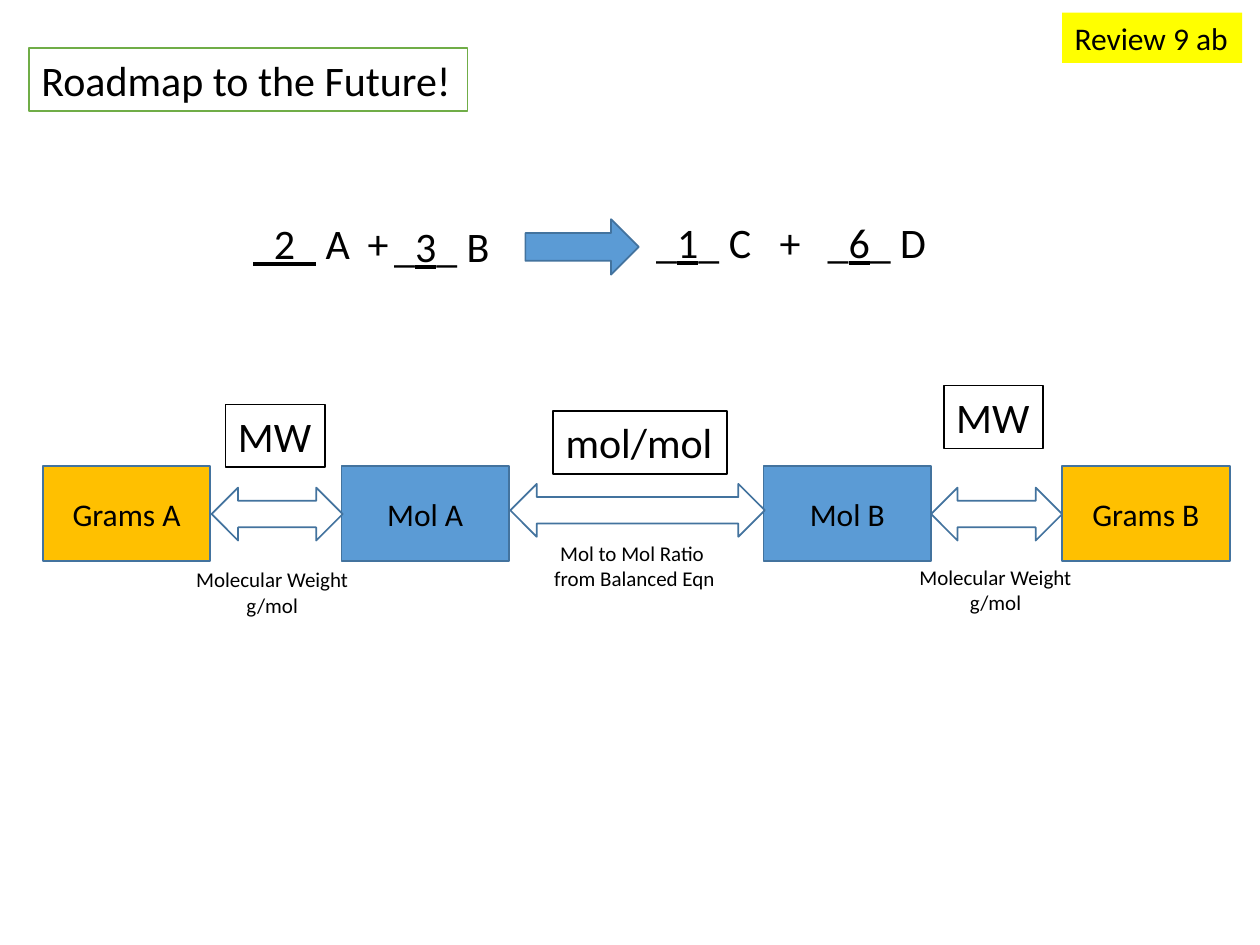
from pptx import Presentation
from pptx.dml.color import RGBColor as RGB
from pptx.enum.shapes import MSO_SHAPE as Kind
from pptx.enum.text import MSO_ANCHOR as Anchor, MSO_AUTO_SIZE as Fit, PP_ALIGN as Align
from pptx.util import Inches, Pt

HUES = {
    "black": "000000", "white": "FFFFFF", "blue": "5B9BD5", "edge": "43739E",
    "gold": "FFC000", "green": "70AD47", "yellow": "FFFF00",
}

deck = Presentation()
deck.slide_width, deck.slide_height = Inches(10), Inches(7.5)
slide = deck.slides.add_slide(deck.slide_layouts[6])


def draw(kind, box, fill=None, line=None):
    shape = slide.shapes.add_shape(kind, *map(Inches, box))
    shape.shadow.inherit = False
    if fill:
        shape.fill.solid()
        shape.fill.fore_color.rgb = RGB.from_string(HUES[fill])
    else:
        shape.fill.background()
    if line:
        shape.line.color.rgb = RGB.from_string(HUES[line])
        shape.line.width = Pt(1)
    else:
        shape.line.fill.background()
    return shape


def write(text, box=None, shape=None, size=24, align=Align.LEFT, anchor=Anchor.TOP, under=()):
    if shape is None:
        shape = slide.shapes.add_textbox(*map(Inches, box))
    frame = shape.text_frame
    frame.word_wrap = anchor == Anchor.MIDDLE
    frame.auto_size = Fit.NONE if frame.word_wrap else Fit.SHAPE_TO_FIT_TEXT
    frame.vertical_anchor = anchor
    for row, parts in enumerate(text):
        para = frame.add_paragraph() if row else frame.paragraphs[0]
        para.alignment = align
        for part in parts:
            run = para.add_run()
            run.text = part
            run.font.name = "Calibri"
            run.font.size = Pt(size)
            run.font.color.rgb = RGB.from_string(HUES["black"])
            if part in under:
                run.font.underline = True


steps = [("Mol A", 2.71, "blue"), ("Mol B", 6.06, "blue"),
         ("Grams A", 0.34, "gold"), ("Grams B", 8.43, "gold")]
for name, left, fill in steps:
    step = draw(Kind.RECTANGLE, (left, 3.7, 1.33, 0.75), fill, "edge")
    write([[name]], shape=step, size=18, align=Align.CENTER, anchor=Anchor.MIDDLE)

for left, top, width in [(4.05, 3.84, 2.02), (1.68, 3.87, 1.04), (7.39, 3.87, 1.04)]:
    draw(Kind.LEFT_RIGHT_ARROW, (left, top, width, 0.42), line="edge")

weight = [["Molecular Weight"], ["g/mol"]]
ratio = [["Mol to Mol Ratio "], ["from Balanced Eqn"]]
for note, left, top, width in [(ratio, 4.29, 4.24, 1.49), (weight, 1.45, 4.45, 1.42),
                               (weight, 7.19, 4.43, 1.42)]:
    write(note, (left, top, width, 0.5), size=12, align=Align.CENTER)

labels = [
    ("MW", (1.79, 3.21, 0.79, 0.5), "white", "black", 24),
    ("MW", (7.49, 3.06, 0.79, 0.5), "white", "black", 24),
    ("mol/mol", (4.39, 3.26, 1.38, 0.5), "white", "black", 24),
    ("Roadmap to the Future!", (0.23, 0.38, 3.48, 0.5), "white", "green", 24),
    ("Review 9 ab", (8.43, 0.1, 1.43, 0.4), "yellow", None, 18),
]
for label, box, fill, line, size in labels:
    write([[label]], shape=draw(Kind.RECTANGLE, box, fill, line), size=size)

draw(Kind.RIGHT_ARROW, (4.17, 1.74, 0.9, 0.44), "blue", "edge")
terms = [
    (["_2_", " A"], 1.91, 1.68, 0.98), (["+"], 2.82, 1.68, 0.37),
    (["_", "3", "_ B"], 3.03, 1.7, 0.97), (["_", "1", "_ C"], 5.11, 1.67, 0.96),
    (["+"], 6.09, 1.67, 0.37), (["_", "6", "_ D"], 6.47, 1.67, 0.99),
]
for parts, left, top, width in terms:
    write([parts], (left, top, width, 0.5), under=("_2_", "3", "1", "6"))

deck.save("out.pptx")
